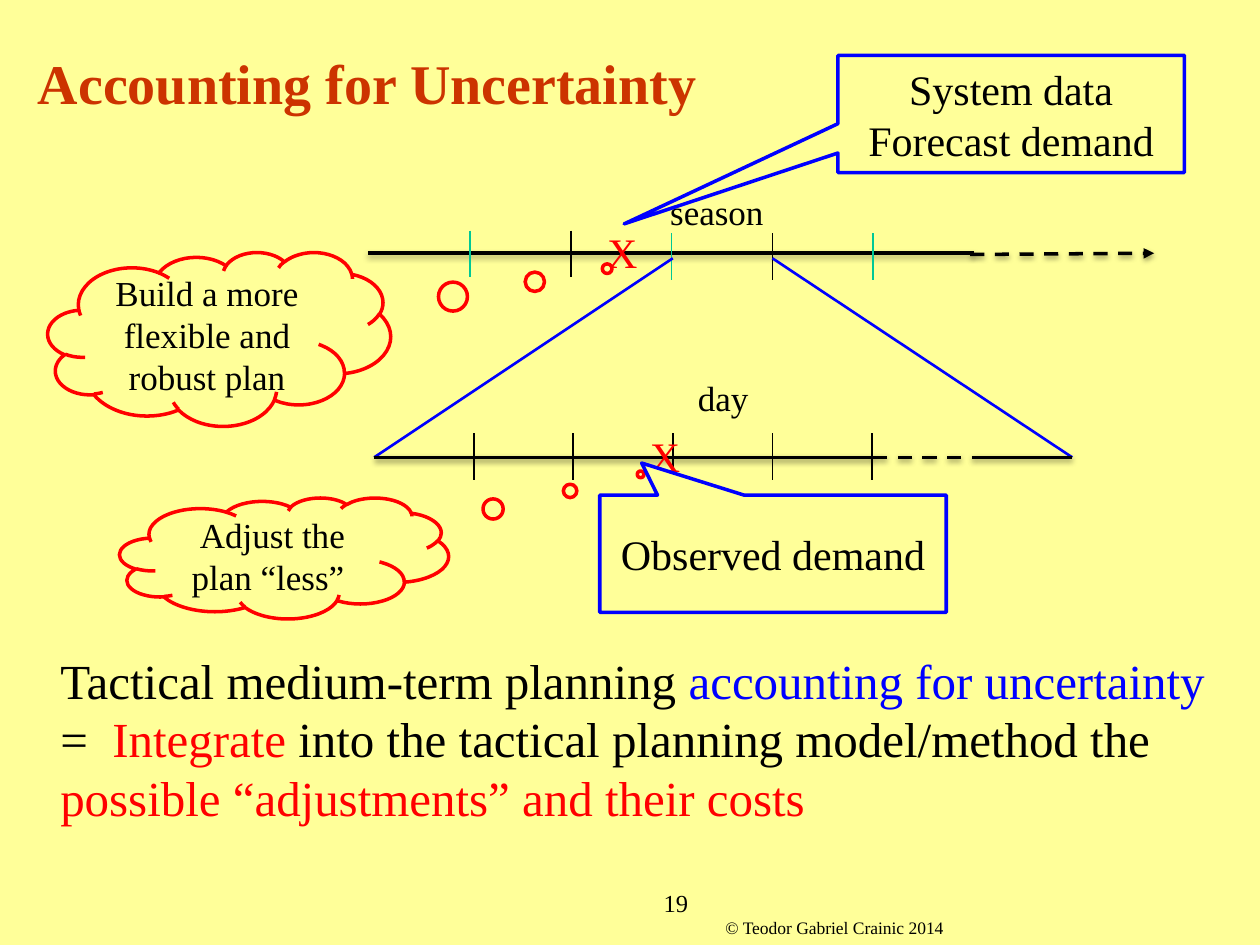
from lxml.etree import SubElement
from pptx import Presentation
from pptx.dml.color import RGBColor
from pptx.enum.dml import MSO_LINE
from pptx.enum.shapes import MSO_CONNECTOR, MSO_SHAPE
from pptx.enum.text import MSO_ANCHOR, MSO_AUTO_SIZE, PP_ALIGN
from pptx.oxml.ns import qn
from pptx.util import Inches, Pt

FONT = "Times New Roman"
YELLOW = RGBColor(0xFF, 0xFF, 0x99)
RUST = RGBColor(0xCC, 0x33, 0x00)
BLACK = RGBColor(0, 0, 0)
BLUE = RGBColor(0, 0, 0xFF)
RED = RGBColor(0xFF, 0, 0)
GREEN = RGBColor(0, 0xC8, 0x96)


class SlideBuilder:
    def __init__(self, deck):
        self.page = deck.slides.add_slide(deck.slide_layouts[5])
        self.page.background.fill.solid()
        self.page.background.fill.fore_color.rgb = YELLOW

    def style(self, font, size, color, bold=False):
        font.name = FONT
        font.size = Pt(size)
        font.bold = bold
        font.color.rgb = color

    def title(self, text, *place):
        box = self.page.shapes.title
        box.left, box.top, box.width, box.height = map(Inches, place)
        box.text_frame.text = text
        box.text_frame.vertical_anchor = MSO_ANCHOR.MIDDLE
        para = box.text_frame.paragraphs[0]
        para.alignment = PP_ALIGN.LEFT
        self.style(para.runs[0].font, 32, RUST, True)

    def text(self, spans, size, *place, wrap=True, align=PP_ALIGN.LEFT):
        """Add a text box; spans is a list of (wording, colour)."""
        box = self.page.shapes.add_textbox(*map(Inches, place))
        frame = box.text_frame
        frame.word_wrap = wrap
        frame.auto_size = MSO_AUTO_SIZE.SHAPE_TO_FIT_TEXT if not wrap else MSO_AUTO_SIZE.NONE
        para = frame.paragraphs[0]
        para.alignment = align
        for wording, color in spans:
            span = para.add_run()
            span.text = wording
            self.style(span.font, size, color)

    def line(self, start, end, color, width, dashed=False, arrow=False, shadow=False):
        ends = map(Inches, (*start, *end))
        connector = self.page.shapes.add_connector(MSO_CONNECTOR.STRAIGHT, *ends)
        connector.line.color.rgb = color
        connector.line.width = Pt(width)
        if dashed:
            connector.line.dash_style = MSO_LINE.DASH
        properties = connector._element.spPr
        if arrow:
            SubElement(properties.find(qn("a:ln")), qn("a:tailEnd"), type="triangle")
        effects = SubElement(properties, qn("a:effectLst"))
        if shadow:
            outer = SubElement(effects, qn("a:outerShdw"), blurRad=str(Pt(3.1)),
                               dist=str(Pt(1.6)), dir="5400000", rotWithShape="0")
            tint = SubElement(outer, qn("a:srgbClr"), val=str(BLACK))
            SubElement(tint, qn("a:alpha"), val="38000")

    def axis(self, start, end, **options):
        self.line(start, end, BLACK, 2, shadow=True, **options)

    def tick(self, x, top, color=BLACK):
        self.line((x, top), (x, top + 0.37), color, 1)

    def callout(self, kind, text, size, color, pointer, *place):
        shape = self.page.shapes.add_shape(kind, *map(Inches, place))
        shape.shadow.inherit = False
        shape.fill.solid()
        shape.fill.fore_color.rgb = YELLOW
        shape.line.color.rgb = color
        shape.line.width = Pt(2)
        for index, value in enumerate(pointer):
            shape.adjustments[index] = value
        frame = shape.text_frame
        frame.word_wrap = True
        frame.vertical_anchor = MSO_ANCHOR.MIDDLE
        para = frame.paragraphs[0]
        para.text = text
        para.alignment = PP_ALIGN.CENTER
        for span in para.runs:
            self.style(span.font, size, BLACK)


def main():
    deck = Presentation()
    deck.slide_width, deck.slide_height = Inches(10), Inches(7.5)
    slide = SlideBuilder(deck)

    # Title and footer
    slide.title("Accounting for Uncertainty", 0.2, 0, 9.45, 1.31)
    slide.text([("© Teodor Gabriel Crainic 2014", BLACK)], 10, 5.66, 7.23, 2, 0.27)
    slide.text([("19", BLACK)], 14, 4.93, 7, 0.63, 0.5, align=PP_ALIGN.RIGHT)

    # Season timeline
    slide.axis((2.92, 2.01), (7.73, 2.01))
    slide.axis((7.7, 2.02), (9.16, 2.01), dashed=True, arrow=True)
    for index in range(5):
        slide.tick(3.73 + 0.8 * index, 1.83 if index < 2 else 1.85,
                   BLACK if index % 2 else GREEN)
    slide.text([("season", BLACK)], 20, 5.22, 1.46, 0.95, 0.44, wrap=False)

    # Zoom from one season period to its days
    slide.line((5.34, 2.05), (2.97, 3.63), BLUE, 1.5)
    slide.line((6.13, 2.05), (8.51, 3.63), BLUE, 1.5)

    # Day timeline
    for index in range(5):
        slide.tick(3.76 + 0.79 * index, 3.44)
    slide.axis((2.97, 3.63), (6.93, 3.63))
    slide.axis((6.93, 3.63), (7.72, 3.63), dashed=True)
    slide.axis((7.72, 3.63), (8.51, 3.63))
    slide.text([("day", BLACK)], 20, 5.44, 2.94, 0.61, 0.44, wrap=False)

    # Conclusion
    slide.text([("Tactical medium-term planning ", BLACK),
                ("accounting for uncertainty ", BLUE),
                ("=  ", BLACK),
                ("Integrate", RED),
                (" into the tactical planning model/method the ", BLACK),
                ("possible “adjustments” and their costs", RED)],
               28, 0.38, 5.11, 9.29, 1.51)

    # Decision points and the plans they lead to
    slide.text([("X", RED)], 24, 4.72, 1.75, 0.45, 0.5, wrap=False)
    slide.callout(MSO_SHAPE.CLOUD_CALLOUT, "Build a more flexible and robust plan", 20,
                  RED, (1.132, -0.404), 0.38, 2, 2.72, 1.38)
    slide.callout(MSO_SHAPE.CLOUD_CALLOUT, "Adjust the plan “less” ", 20,
                  RED, (1.084, -0.693), 0.95, 3.95, 2.61, 0.96)
    slide.text([("X", RED)], 24, 5.06, 3.37, 0.45, 0.5, wrap=False)

    # Information available at each point
    slide.callout(MSO_SHAPE.RECTANGULAR_CALLOUT, "System data\vForecast demand", 24,
                  BLUE, (-1.117, 0.938), 6.65, 0.44, 2.75, 0.93)
    slide.callout(MSO_SHAPE.RECTANGULAR_CALLOUT, "Observed demand", 24,
                  BLUE, (-0.379, -0.774), 4.76, 3.93, 2.75, 0.93)

    deck.save("out.pptx")


if __name__ == "__main__":
    main()
